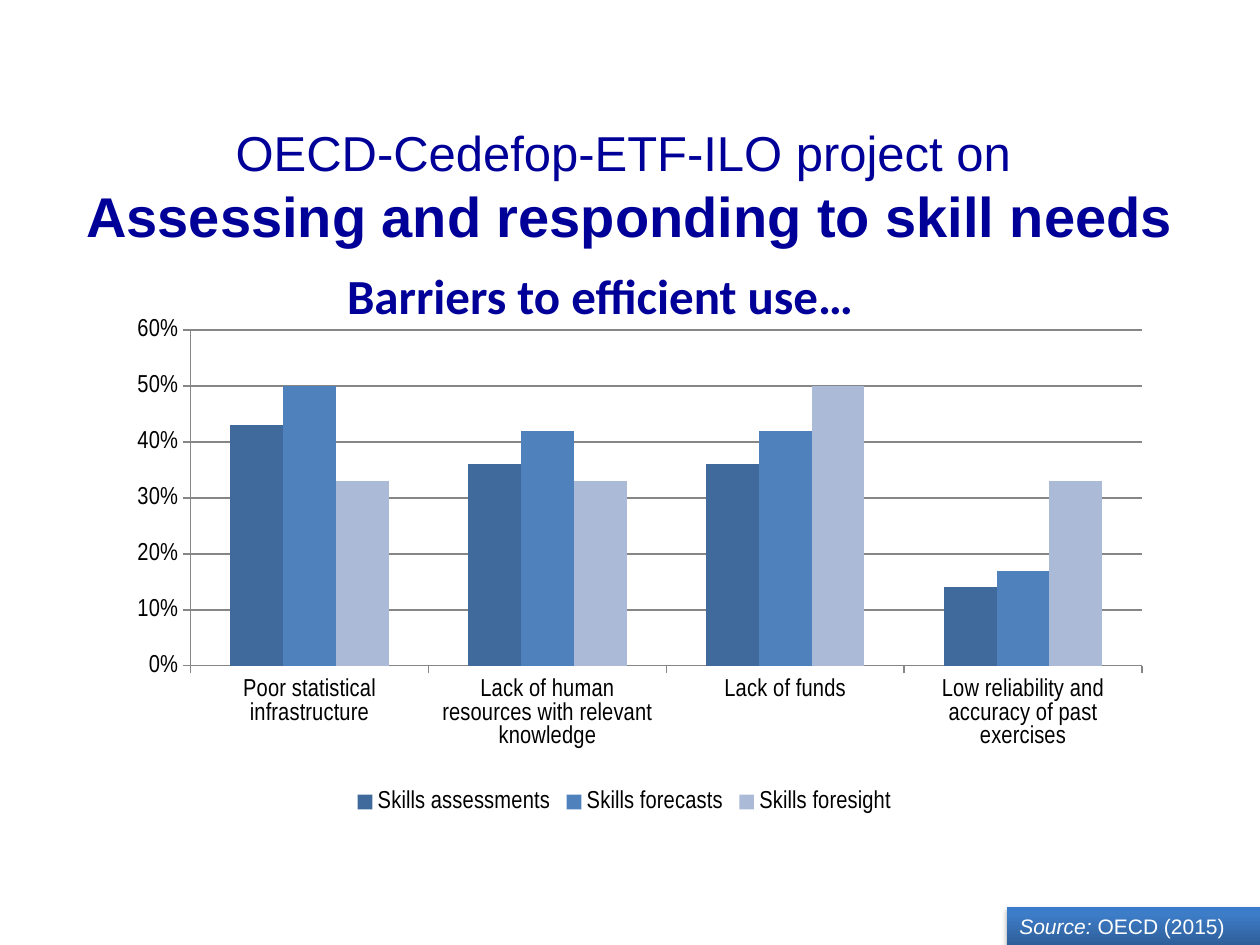
from dataclasses import dataclass

from pptx import Presentation
from pptx.chart.data import CategoryChartData
from pptx.dml.color import RGBColor
from pptx.enum.chart import XL_CHART_TYPE, XL_LEGEND_POSITION, XL_TICK_MARK
from pptx.enum.shapes import MSO_SHAPE
from pptx.enum.text import MSO_ANCHOR, PP_ALIGN
from pptx.oxml import parse_xml
from pptx.oxml.ns import nsdecls
from pptx.util import Emu, Pt

PX = 914400 / 126
COLUMNS = XL_CHART_TYPE.COLUMN_CLUSTERED
BOTTOM = XL_LEGEND_POSITION.BOTTOM
OUTSIDE, NO_TICK = XL_TICK_MARK.OUTSIDE, XL_TICK_MARK.NONE
RECTANGLE = MSO_SHAPE.RECTANGLE
MIDDLE, TOP = MSO_ANCHOR.MIDDLE, MSO_ANCHOR.TOP
CENTER, LEFT = PP_ALIGN.CENTER, PP_ALIGN.LEFT


@dataclass(frozen=True)
class Theme:
    navy: str = "000099"
    black: str = "000000"
    white: str = "FFFFFF"
    axis: str = "868686"
    series: tuple = ("406A9B", "4F81BD", "AABAD7")
    banner: tuple = ((0, "2F5F99"), (80, "3D7CC7"), (100, "3A7CCB"))
    body: str = "Arial"
    heading: str = "Calibri"
    chart: str = "Arial Narrow"
    project_size: int = 28
    name_size: int = 32
    chart_size: int = 14
    source_size: int = 12


def px(*lengths):
    return [Emu(round(length * PX)) for length in lengths]


def set_font(font, color, **values):
    for name, value in values.items():
        setattr(font, name, Pt(value) if name == "size" else value)
    font.color.rgb = RGBColor.from_string(color)


class SlideBuilder:
    def __init__(self, slide, theme):
        self.slide = slide
        self.theme = theme

    def fill_text(self, shape, lines, anchor, alignment):
        """Each line is a list of (text, color, font values) runs."""
        frame = shape.text_frame
        frame.word_wrap = True
        frame.vertical_anchor = anchor
        paragraph = frame.paragraphs[0]
        paragraph.alignment = alignment
        for number, runs in enumerate(lines):
            if number:
                paragraph.add_line_break()
            for text, color, values in runs:
                run = paragraph.add_run()
                run.text = text
                set_font(run.font, color, **values)

    def text(self, box, lines):
        shape = self.slide.shapes.add_textbox(*px(*box))
        self.fill_text(shape, lines, MIDDLE, CENTER)

    def banner(self, box, lines):
        shape = self.slide.shapes.add_shape(RECTANGLE, *px(*box))
        shape.line.fill.background()
        stops = "".join(
            f'<a:gs pos="{position * 1000}"><a:srgbClr val="{color}"/></a:gs>'
            for position, color in self.theme.banner)
        shape.fill.gradient()
        shape.fill.gradient_angle = 90
        properties = shape._element.spPr
        stop_list = properties.find(".//{*}gsLst")
        stop_list.getparent().replace(
            stop_list, parse_xml(f'<a:gsLst {nsdecls("a")}>{stops}</a:gsLst>'))
        # Soft shadow straight below
        properties.append(parse_xml(
            f'<a:effectLst {nsdecls("a")}><a:outerShdw blurRad="{Pt(3.1)}" '
            f'dist="{Pt(1.8)}" dir="5400000" rotWithShape="0">'
            f'<a:srgbClr val="{self.theme.black}"><a:alpha val="35000"/></a:srgbClr>'
            '</a:outerShdw></a:effectLst>'))
        self.fill_text(shape, lines, TOP, LEFT)

    def column_chart(self, box, categories, series, layout):
        theme = self.theme
        data = CategoryChartData(number_format="0%")
        data.categories = categories
        for name, values in series.items():
            data.add_series(name, values)
        chart = self.slide.shapes.add_chart(COLUMNS, *px(*box), data).chart
        chart.has_title = False
        set_font(chart.font, theme.black, name=theme.chart, size=theme.chart_size)

        # Columns
        plot = chart.plots[0]
        plot.gap_width, plot.overlap, plot.vary_by_categories = 150, 0, False
        for column, color in zip(plot.series, theme.series):
            column.format.fill.solid()
            column.format.fill.fore_color.rgb = RGBColor.from_string(color)

        # Axes and gridlines
        value_axis, category_axis = chart.value_axis, chart.category_axis
        value_axis.minimum_scale, value_axis.maximum_scale = 0, 0.6
        value_axis.major_unit = 0.1
        value_axis.tick_labels.number_format = "0%"
        value_axis.tick_labels.number_format_is_linked = False
        value_axis.has_major_gridlines = True
        for axis in (value_axis, category_axis):
            axis.major_tick_mark, axis.minor_tick_mark = OUTSIDE, NO_TICK
            set_font(axis.tick_labels.font, theme.black,
                     name=theme.chart, size=theme.chart_size)
        for part in (value_axis, category_axis, value_axis.major_gridlines):
            part.format.line.color.rgb = RGBColor.from_string(theme.axis)
            part.format.line.width = Pt(0.75)

        # Legend
        chart.has_legend = True
        chart.legend.position = BOTTOM
        chart.legend.include_in_layout = False
        set_font(chart.legend.font, theme.black,
                 name=theme.chart, size=theme.chart_size)

        # Fixed inner plot area
        sizes = "".join(f'<c:{name} val="{value}"/>'
                        for name, value in zip("xywh", layout))
        area = chart._chartSpace.chart.plotArea
        for old in area.findall("{*}layout"):
            area.remove(old)
        area.insert(0, parse_xml(
            f'<c:layout {nsdecls("c")}><c:manualLayout><c:layoutTarget val="inner"/>'
            f'<c:xMode val="edge"/><c:yMode val="edge"/>{sizes}'
            '</c:manualLayout></c:layout>'))


def main():
    presentation = Presentation()
    presentation.slide_width, presentation.slide_height = px(1260, 945)
    theme = Theme()
    slide = presentation.slides.add_slide(presentation.slide_layouts[6])
    builder = SlideBuilder(slide, theme)

    # Barriers by kind of exercise
    builder.column_chart(
        (74, 304, 1101, 515),
        ["Poor statistical infrastructure",
         "Lack of human resources with relevant knowledge",
         "Lack of funds",
         "Low reliability and accuracy of past exercises"],
        {"Skills assessments": (0.43, 0.36, 0.36, 0.14),
         "Skills forecasts": (0.5, 0.42, 0.42, 0.17),
         "Skills foresight": (0.33, 0.33, 0.5, 0.33)},
        (0.106, 0.051, 0.864, 0.652))

    # Project name and slide title
    project = dict(name=theme.body, size=theme.project_size)
    name = dict(name=theme.body, size=theme.name_size, bold=True)
    title = dict(name=theme.heading, size=theme.project_size, bold=True)
    builder.text((63, 107, 1134, 158), [
        [("OECD-Cedefop-ETF-ILO project on ", theme.navy, project)],
        [("Assessing and responding to skill needs", theme.navy, name)]])
    builder.text((253, 265, 694, 59),
                 [[("Barriers to efficient use…", theme.navy, title)]])

    # Source banner
    source = dict(name=theme.body, size=theme.source_size)
    builder.banner((1007, 907, 253, 38), [
        [("Source: ", theme.white, dict(source, italic=True)),
         ("OECD (2015)", theme.white, source)]])

    presentation.save("out.pptx")


if __name__ == "__main__":
    main()
